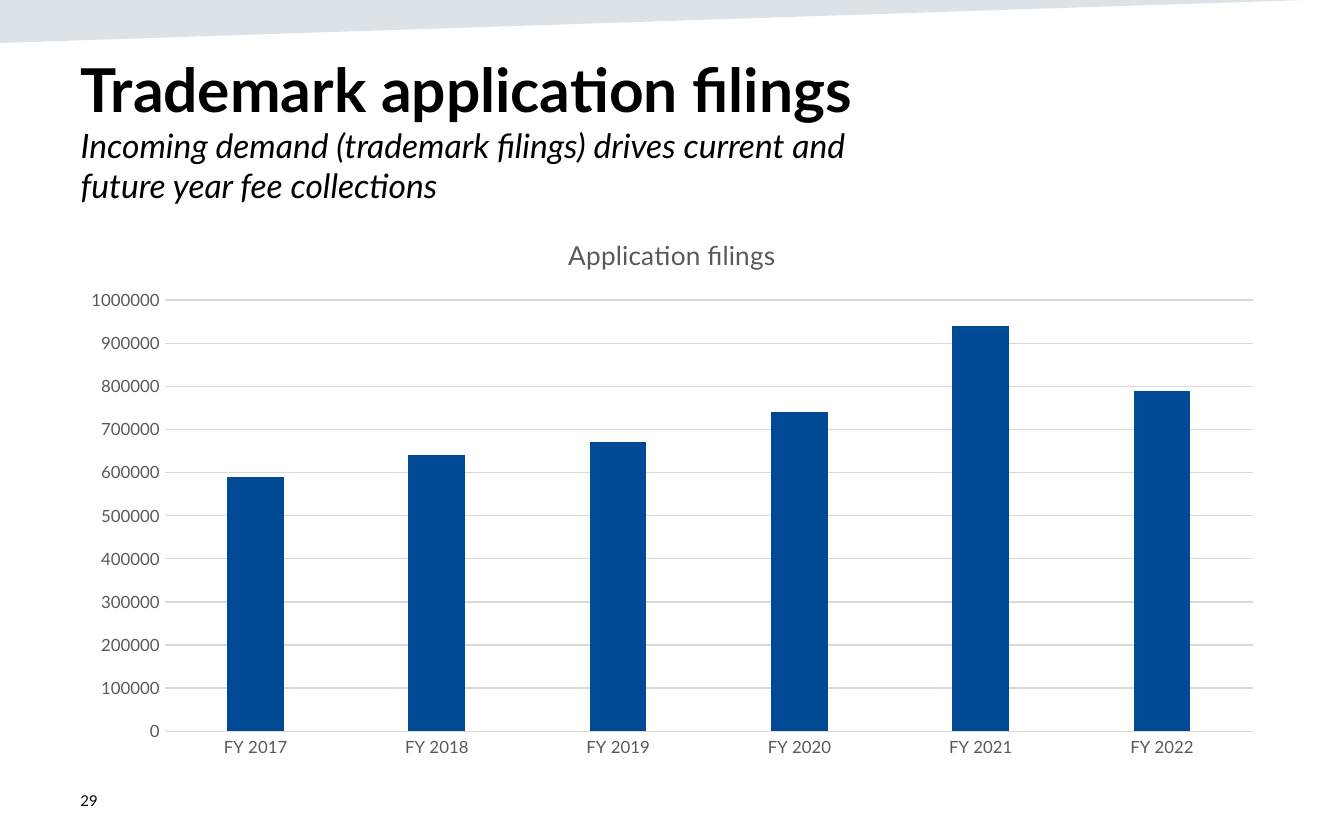
from pptx import Presentation
from pptx.chart.data import CategoryChartData as Data
from pptx.dml.color import RGBColor as RGB
from pptx.enum.chart import XL_CHART_TYPE as Kind, XL_TICK_MARK as Tick
from pptx.enum.text import MSO_ANCHOR as Anchor, MSO_AUTO_SIZE as Fit, PP_ALIGN as Align
from pptx.oxml.ns import qn
from pptx.util import Emu, Pt
from lxml.etree import SubElement as Sub

PX = 9144  # 100 px to the inch
BLACK = RGB(0x00, 0x00, 0x00)
GRAY = RGB(0x59, 0x59, 0x59)
GRID = RGB(0xD9, 0xD9, 0xD9)
NAVY = RGB(0x16, 0x44, 0x69)
BLUE = RGB(0x00, 0x4A, 0x95)


def box(*sides):
    """Turn px lengths into EMU."""
    return [Emu(side * PX) for side in sides]


def style(font, size, color, bold=False, italic=False):
    font.name, font.size = "Lato", Pt(size)
    font.bold, font.italic = bold, italic
    font.color.rgb = color


deck = Presentation()
deck.slide_width, deck.slide_height = box(1000, 625)
slide = deck.slides.add_slide(deck.slide_layouts[5])
shapes = slide.shapes

# Slanted band along the top edge
pen = shapes.build_freeform(0, 0, scale=PX)
pen.add_line_segments([(0, 32), (1002, -1)], close=True)
band = pen.convert_to_shape()
band.shadow.inherit = False
band.line.fill.background()
band.fill.solid()
band.fill.fore_color.rgb = NAVY
tint = band.fill._xPr.find(".//" + qn("a:srgbClr"))
Sub(tint, qn("a:alpha"), val="15000")

# Title and subtitle
title = shapes.title
title.left, title.top, title.width, title.height = box(50, 34, 900, 104)
frame = title.text_frame
frame.auto_size = Fit.NONE
frame.vertical_anchor = Anchor.TOP
frame.text = (
    "Trademark application filings\n"
    "Incoming demand (trademark filings) drives current and\v"
    "future year fee collections"
)
head, sub = frame.paragraphs
style(head.font, 32.4, BLACK, bold=True)
style(sub.font, 18, BLACK, italic=True)
for para in (head, sub):
    para.alignment = Align.LEFT
    para.space_before = Pt(0)

# Page number
page = shapes.add_textbox(*box(50, 579, 225, 33)).text_frame
page.word_wrap = True
page.vertical_anchor = Anchor.MIDDLE
page.text = "29"
style(page.paragraphs[0].font, 8, BLACK)

# Filings by fiscal year
data = Data()
data.categories = [f"FY {year}" for year in range(2017, 2023)]
data.add_series("Series 1", [590000, 640000, 670000, 740000, 940000, 790000])
chart = shapes.add_chart(Kind.COLUMN_CLUSTERED, *box(50, 158, 900, 414), data).chart
style(chart.font, 10, BLACK)
chart.has_legend = False
chart.has_title = True
label = chart.chart_title
label.include_in_layout = False
label.text_frame.text = "Application filings"
style(label.text_frame.paragraphs[0].font, 14, GRAY)

plot = chart.plots[0]
plot.gap_width, plot.overlap = 219, -27
plot.vary_by_categories = False
bars = plot.series[0]
bars.invert_if_negative = False
bars.format.fill.solid()
bars.format.fill.fore_color.rgb = BLUE

years, count = chart.category_axis, chart.value_axis
for axis in (years, count):
    axis.major_tick_mark = axis.minor_tick_mark = Tick.NONE
    style(axis.tick_labels.font, 9, GRAY)
count.minimum_scale, count.maximum_scale, count.major_unit = 0, 1000000, 100000
count.format.line.fill.background()
for line in (years.format.line, count.major_gridlines.format.line):
    line.color.rgb = GRID
    line.width = Pt(0.75)

deck.save("out.pptx")
